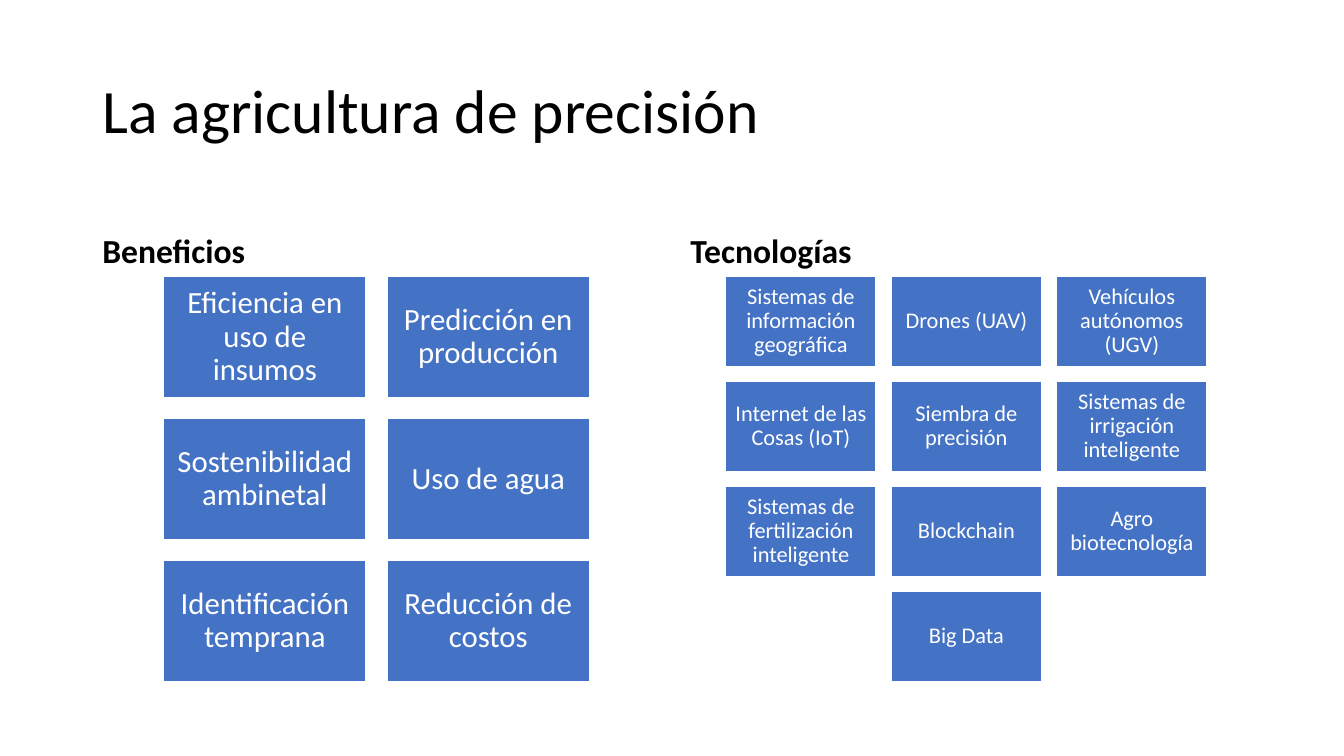
from dataclasses import dataclass

from pptx import Presentation
from pptx.dml.color import RGBColor
from pptx.enum.shapes import MSO_SHAPE
from pptx.enum.text import MSO_ANCHOR, MSO_AUTO_SIZE, PP_ALIGN
from pptx.util import Cm, Pt

RECTANGLE = MSO_SHAPE.RECTANGLE
MIDDLE, BOTTOM = MSO_ANCHOR.MIDDLE, MSO_ANCHOR.BOTTOM
LEFT, CENTER = PP_ALIGN.LEFT, PP_ALIGN.CENTER
NO_AUTOFIT = MSO_AUTO_SIZE.NONE

FONT = "Calibri"
BLACK, WHITE, BLUE = "000000", "FFFFFF", "4472C4"
GRID_TOP = 6.96
HEADING_TOP, HEADING_HEIGHT = 4.67, 2.29


@dataclass
class Section:
    heading: str
    heading_left: float
    heading_width: float
    grid_left: float
    columns: int
    card_width: float
    card_height: float
    column_step: float
    row_step: float
    inset: float
    size: int
    cards: list[str]


SECTIONS = [
    Section(
        "Beneficios", 2.33, 14.33, 4.12, 2, 5.11, 3.07, 5.63, 3.58, 0.23, 22,
        ["Eficiencia en uso de insumos", "Predicción en producción",
         "Sostenibilidad ambinetal", "Uso de agua",
         "Identificación temprana", "Reducción de costos"],
    ),
    Section(
        "Tecnologías", 17.15, 14.4, 18.29, 3, 3.79, 2.27, 4.17, 2.65, 0.17, 16,
        ["Sistemas de información geográfica", "Drones (UAV)",
         "Vehículos autónomos (UGV)", "Internet de las Cosas (IoT)",
         "Siembra de precisión", "Sistemas de irrigación inteligente",
         "Sistemas de fertilización inteligente", "Blockchain",
         "Agro biotecnología", "Big Data"],
    ),
]


def color(value: str) -> RGBColor:
    return RGBColor.from_string(value)


def write(shape, text: str, size: int, ink: str, align, anchor,
          bold: bool = False, inset: float | None = None) -> None:
    frame = shape.text_frame
    frame.word_wrap = True
    frame.auto_size = NO_AUTOFIT
    frame.vertical_anchor = anchor
    if inset is not None:
        frame.margin_left = frame.margin_right = Cm(inset)
        frame.margin_top = frame.margin_bottom = Cm(inset)
    paragraph = frame.paragraphs[0]
    paragraph.alignment = align
    paragraph.line_spacing = 0.9
    run = paragraph.add_run()
    run.text = text
    run.font.name = FONT
    run.font.size = Pt(size)
    run.font.bold = bold
    run.font.color.rgb = color(ink)


def draw_title(slide, text: str) -> None:
    title = slide.shapes.title
    title.left, title.top = Cm(2.33), Cm(1.01)
    title.width, title.height = Cm(29.21), Cm(3.68)
    write(title, text, 44, BLACK, LEFT, MIDDLE)


def draw_card(slide, section: Section, text: str, left: float, top: float) -> None:
    card = slide.shapes.add_shape(
        RECTANGLE, Cm(left), Cm(top), Cm(section.card_width), Cm(section.card_height))
    card.shadow.inherit = False
    card.fill.solid()
    card.fill.fore_color.rgb = color(BLUE)
    card.line.color.rgb = color(WHITE)
    card.line.width = Pt(1)
    write(card, text, section.size, WHITE, CENTER, MIDDLE, inset=section.inset)


def draw_section(slide, section: Section) -> None:
    heading = slide.shapes.add_textbox(
        Cm(section.heading_left), Cm(HEADING_TOP),
        Cm(section.heading_width), Cm(HEADING_HEIGHT))
    write(heading, section.heading, 24, BLACK, LEFT, BOTTOM, bold=True)
    for start in range(0, len(section.cards), section.columns):
        row_cards = section.cards[start:start + section.columns]
        top = GRID_TOP + start // section.columns * section.row_step
        indent = (section.columns - len(row_cards)) / 2
        for column, text in enumerate(row_cards):
            left = section.grid_left + (indent + column) * section.column_step
            draw_card(slide, section, text, left, top)


def main() -> None:
    deck = Presentation()
    deck.slide_width, deck.slide_height = Cm(33.87), Cm(19.05)
    slide = deck.slides.add_slide(deck.slide_layouts[5])
    draw_title(slide, "La agricultura de precisión")
    for section in SECTIONS:
        draw_section(slide, section)
    deck.save("out.pptx")


if __name__ == "__main__":
    main()
